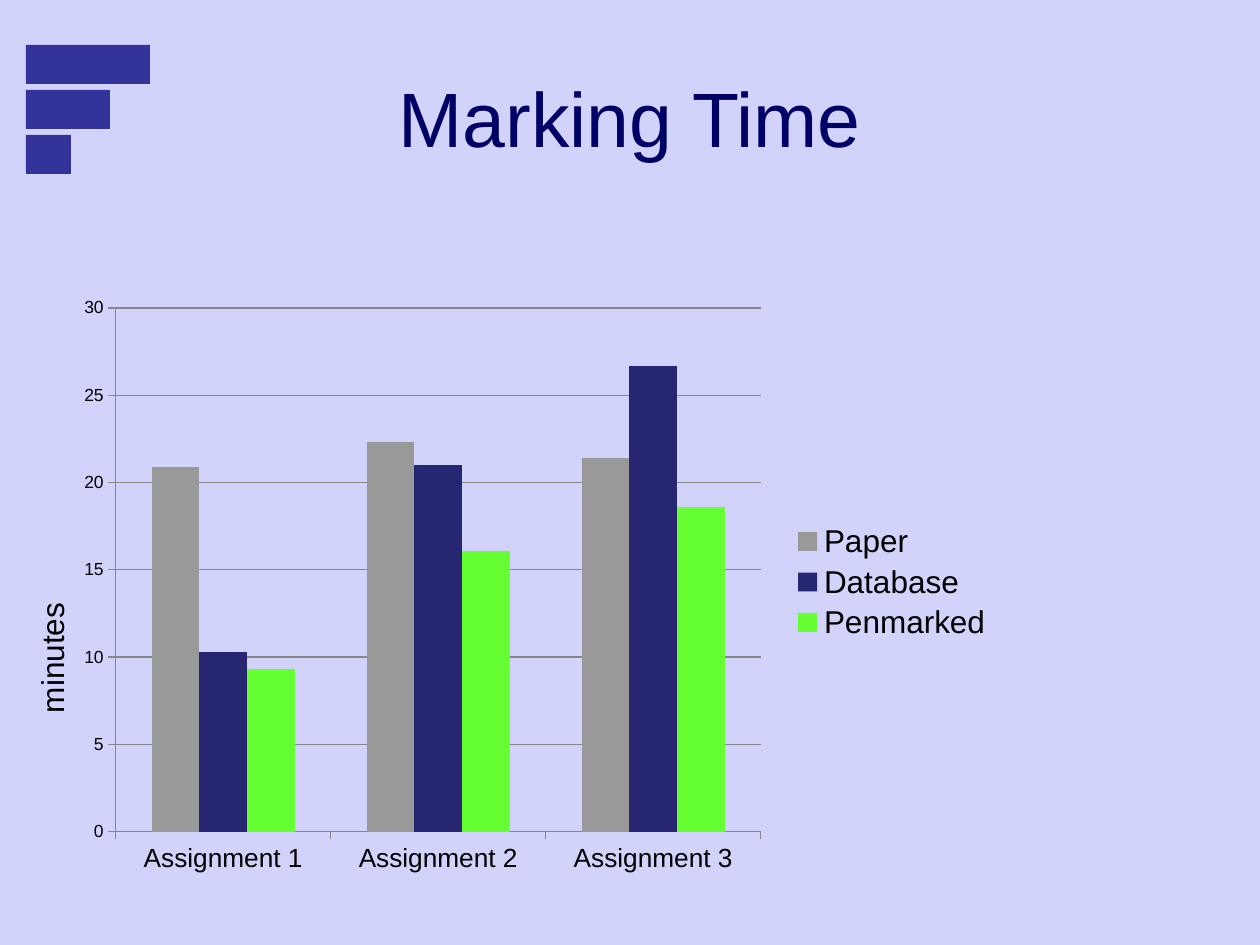
from lxml import etree
from pptx import Presentation
from pptx import util as u
from pptx.chart.data import CategoryChartData
from pptx.dml.color import RGBColor
from pptx.enum import chart as ch, shapes, text
from pptx.oxml.ns import qn

PX = u.Inches(1) // 126
BACKGROUND = RGBColor(0xD2, 0xD3, 0xFA)
BAR = RGBColor(0x33, 0x33, 0x99)
TITLE = RGBColor(0x00, 0x00, 0x66)
BLACK = RGBColor(0x00, 0x00, 0x00)
AXIS = RGBColor(0x87, 0x87, 0x87)
FONT = "Arial"

ASSIGNMENTS = ["Assignment 1", "Assignment 2", "Assignment 3"]
SERIES = [
    ("Paper", (20.9, 22.3, 21.4), RGBColor(0x99, 0x99, 0x99)),
    ("Database", (10.3, 21, 26.7), RGBColor(0x26, 0x26, 0x73)),
    ("Penmarked", (9.3, 16.1, 18.6), RGBColor(0x66, 0xFF, 0x33)),
]


def px(*lengths):
    return [n * PX for n in lengths]


def format_font(font, size, color=BLACK):
    font.name = FONT
    font.size = u.Pt(size)
    font.color.rgb = color


def write(sp, content, size, color=BLACK, align=text.PP_ALIGN.LEFT,
          anchor=text.MSO_ANCHOR.TOP):
    tf = sp.text_frame
    tf.word_wrap = True
    tf.vertical_anchor = anchor
    p = tf.paragraphs[0]
    p.alignment = align
    r = p.add_run()
    r.text = content
    format_font(r.font, size, color)


def add_title(s, content):
    sp = s.shapes.title
    sp.left, sp.top, sp.width, sp.height = px(63, 38, 1134, 157)
    write(sp, content, 44, TITLE, text.PP_ALIGN.CENTER, text.MSO_ANCHOR.MIDDLE)


def add_corner_bars(s):
    for i, width in enumerate((124, 84, 45)):
        sp = s.shapes.add_shape(shapes.MSO_SHAPE.RECTANGLE,
                                *px(26, 45 + 45 * i, width, 39))
        sp.shadow.inherit = False
        sp.fill.solid()
        sp.fill.fore_color.rgb = BAR
        sp.line.fill.background()


def set_layout(parent, index, inner=False, **fractions):
    """Place a chart part by fractions of the chart's size."""
    for old in parent.findall(qn("c:layout")):
        parent.remove(old)
    layout = etree.Element(qn("c:layout"))
    manual = etree.SubElement(layout, qn("c:manualLayout"))
    if inner:
        etree.SubElement(manual, qn("c:layoutTarget"), val="inner")
    for key in ("xMode", "yMode"):
        etree.SubElement(manual, qn(f"c:{key}"), val="edge")
    for key, value in fractions.items():
        etree.SubElement(manual, qn(f"c:{key}"), val=str(value))
    parent.insert(index, layout)


def format_axis(axis, size):
    format_font(axis.tick_labels.font, size)
    axis.major_tick_mark = ch.XL_TICK_MARK.OUTSIDE
    axis.minor_tick_mark = ch.XL_TICK_MARK.NONE
    axis.format.line.color.rgb = AXIS


def add_time_chart(s):
    data = CategoryChartData()
    data.categories = ASSIGNMENTS
    for name, values, _ in SERIES:
        data.add_series(name, values)
    chart = s.shapes.add_chart(ch.XL_CHART_TYPE.COLUMN_CLUSTERED,
                               *px(69, 284, 935, 602), data).chart
    format_font(chart.font, 10)
    chart.has_title = False

    plot = chart.plots[0]
    plot.vary_by_categories = False
    plot.gap_width, plot.overlap = 150, 0
    for series, (_, _, color) in zip(plot.series, SERIES):
        series.format.fill.solid()
        series.format.fill.fore_color.rgb = color

    format_axis(chart.category_axis, 15)
    values = chart.value_axis
    format_axis(values, 10)
    values.minimum_scale, values.maximum_scale, values.major_unit = 0, 30, 5
    values.has_major_gridlines = True
    values.major_gridlines.format.line.color.rgb = AXIS

    chart.has_legend = True
    legend = chart.legend
    legend.position = ch.XL_LEGEND_POSITION.RIGHT
    legend.include_in_layout = False
    format_font(legend.font, 18)

    plot_area = chart.element.find(".//" + qn("c:plotArea"))
    set_layout(plot_area, 0, inner=True, x=0.05, y=0.04, w=0.69, h=0.87)
    set_layout(chart.element.find(".//" + qn("c:legend")), 1,
               x=0.77, y=0.39, w=0.22, h=0.21)


def add_axis_label(s, content):
    sp = s.shapes.add_textbox(*px(-164, 485, 431, 50))
    sp.rotation = 270
    write(sp, content, 18)


def main():
    prs = Presentation()
    prs.slide_width, prs.slide_height = px(1260, 945)
    s = prs.slides.add_slide(prs.slide_layouts[5])
    s.background.fill.solid()
    s.background.fill.fore_color.rgb = BACKGROUND
    add_corner_bars(s)
    add_title(s, "Marking Time")
    add_time_chart(s)
    add_axis_label(s, "minutes")
    prs.save("out.pptx")


if __name__ == "__main__":
    main()
